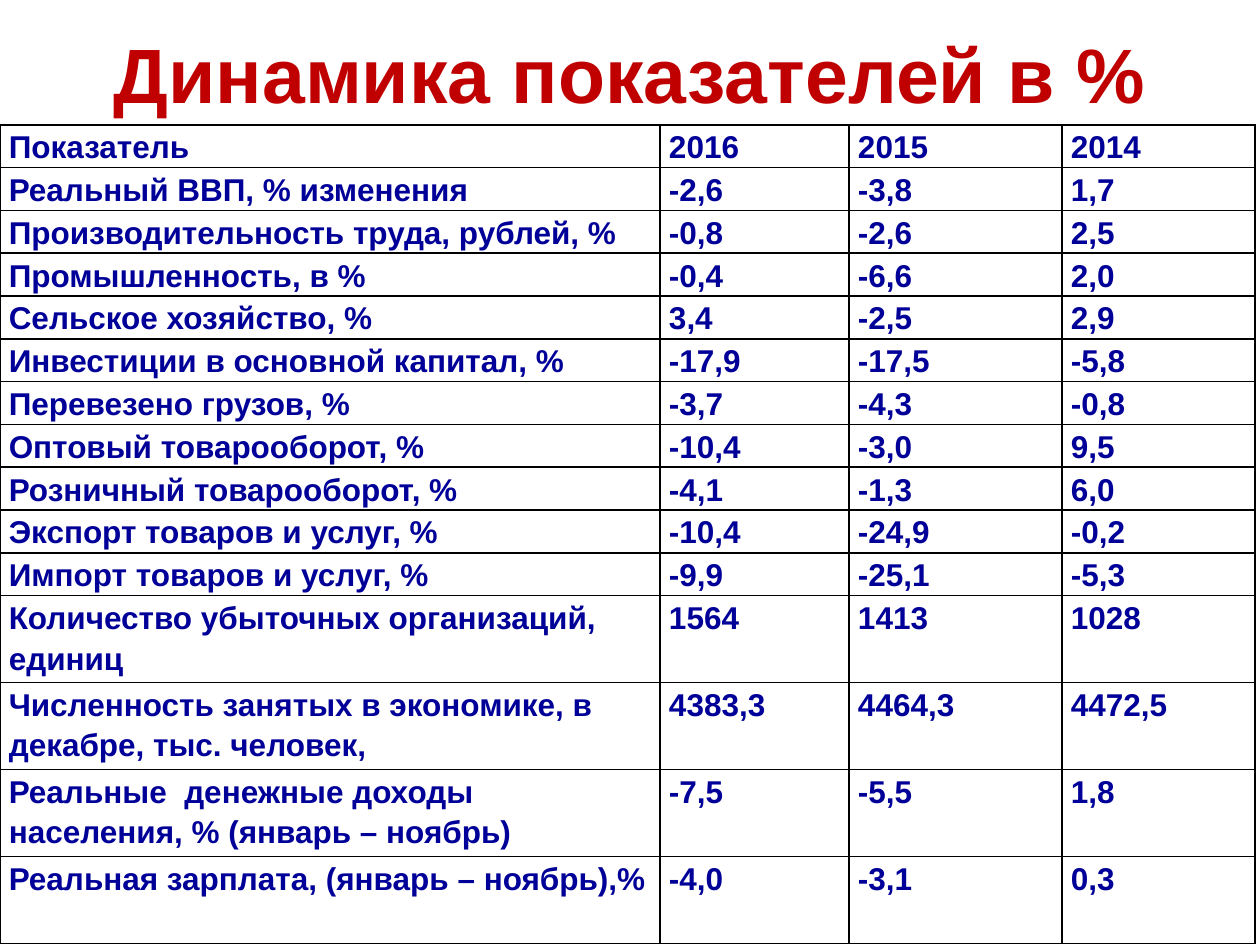
from lxml import etree
from pptx import Presentation
from pptx.dml.color import RGBColor
from pptx.enum.text import MSO_ANCHOR, PP_ALIGN
from pptx.oxml.ns import qn
from pptx.util import Inches, Pt

CENTER, LEFT = PP_ALIGN.CENTER, PP_ALIGN.LEFT
MIDDLE, TOP = MSO_ANCHOR.MIDDLE, MSO_ANCHOR.TOP
TITLE_ONLY = 5

COLORS = {"title": "C00000", "outline": "FFFF00", "text": "000099", "border": "000000"}
TITLE_FONT = {"name": "Arial", "size": Pt(44), "bold": True}
CELL_FONT = {"name": "Arial", "size": Pt(18), "bold": True}
CELL_FORMAT = {
    "margin_left": Inches(0.07), "margin_right": Inches(0.07),
    "margin_top": 0, "margin_bottom": 0, "vertical_anchor": TOP,
}

COLUMN_WIDTHS = [5.24, 1.5, 1.69, 1.53]
SINGLE_ROW, DOUBLE_ROW = 0.34, 0.69
DOUBLE_ROWS = 4  # the last rows are two lines tall
INDICATORS = [
    ("Показатель", "2016", "2015", "2014"),
    ("Реальный ВВП, % изменения", "-2,6", "-3,8", "1,7"),
    ("Производительность труда, рублей, %", "-0,8", "-2,6", "2,5"),
    ("Промышленность, в %", "-0,4", "-6,6", "2,0"),
    ("Сельское хозяйство, %", "3,4", "-2,5", "2,9"),
    ("Инвестиции в основной капитал, %", "-17,9", "-17,5", "-5,8"),
    ("Перевезено грузов, %", "-3,7", "-4,3", "-0,8"),
    ("Оптовый товарооборот, %", "-10,4", "-3,0", "9,5"),
    ("Розничный товарооборот, %", "-4,1", "-1,3", "6,0"),
    ("Экспорт товаров и услуг, %", "-10,4", "-24,9", "-0,2"),
    ("Импорт товаров и услуг, %", "-9,9", "-25,1", "-5,3"),
    ("Количество убыточных организаций, единиц", "1564", "1413", "1028"),
    ("Численность занятых в экономике, в декабре, тыс. человек,",
     "4383,3", "4464,3", "4472,5"),
    ("Реальные  денежные доходы населения, % (январь – ноябрь)",
     "-7,5", "-5,5", "1,8"),
    ("Реальная зарплата, (январь – ноябрь),%", "-4,0", "-3,1", "0,3"),
]


def set_format(target, values):
    for name, value in values.items():
        setattr(target, name, value)


def write_text(para, text, font, color, align):
    span = para.add_run()
    span.text = text
    set_format(span.font, font)
    span.font.color.rgb = RGBColor.from_string(color)
    para.alignment = align
    return span


def make_line(tag, width, color):
    """Return a solid line element for a cell border or a text outline."""
    line = etree.Element(qn(tag), w=str(Pt(width)))
    fill = etree.SubElement(line, qn("a:solidFill"))
    etree.SubElement(fill, qn("a:srgbClr"), val=color)
    return line


def place_title(page, box, text):
    title = page.shapes.title
    title.left, title.top, title.width, title.height = map(Inches, box)
    frame = title.text_frame
    frame.word_wrap = True
    frame.vertical_anchor = MIDDLE
    span = write_text(frame.paragraphs[0], text, TITLE_FONT, COLORS["title"], CENTER)
    span.font._element.insert(0, make_line("a:ln", 0.75, COLORS["outline"]))


def fill_cell(cell, text):
    set_format(cell, CELL_FORMAT)
    para = cell.text_frame.paragraphs[0]
    para.line_spacing = 1.15
    write_text(para, text, CELL_FONT, COLORS["text"], LEFT)
    cell.fill.background()
    properties = cell._tc.get_or_add_tcPr()
    for index, side in enumerate("LRTB"):
        properties.insert(index, make_line(f"a:ln{side}", 1, COLORS["border"]))


def place_table(page, left, top, rows):
    heights = [SINGLE_ROW] * (len(rows) - DOUBLE_ROWS) + [DOUBLE_ROW] * DOUBLE_ROWS
    table = page.shapes.add_table(
        len(rows), len(COLUMN_WIDTHS), Inches(left), Inches(top),
        Inches(sum(COLUMN_WIDTHS)), Inches(sum(heights)),
    ).table
    table.first_row = table.horz_banding = False
    for column, width in zip(table.columns, COLUMN_WIDTHS):
        column.width = Inches(width)
    for row, height, texts in zip(table.rows, heights, rows):
        row.height = Inches(height)
        for cell, text in zip(row.cells, texts):
            fill_cell(cell, text)


def main():
    deck = Presentation()
    deck.slide_width, deck.slide_height = Inches(10), Inches(7.5)
    page = deck.slides.add_slide(deck.slide_layouts[TITLE_ONLY])
    place_title(page, (0, 0, 10, 1.15), "Динамика показателей в %")
    place_table(page, 0, 0.99, INDICATORS)
    deck.save("out.pptx")


if __name__ == "__main__":
    main()
